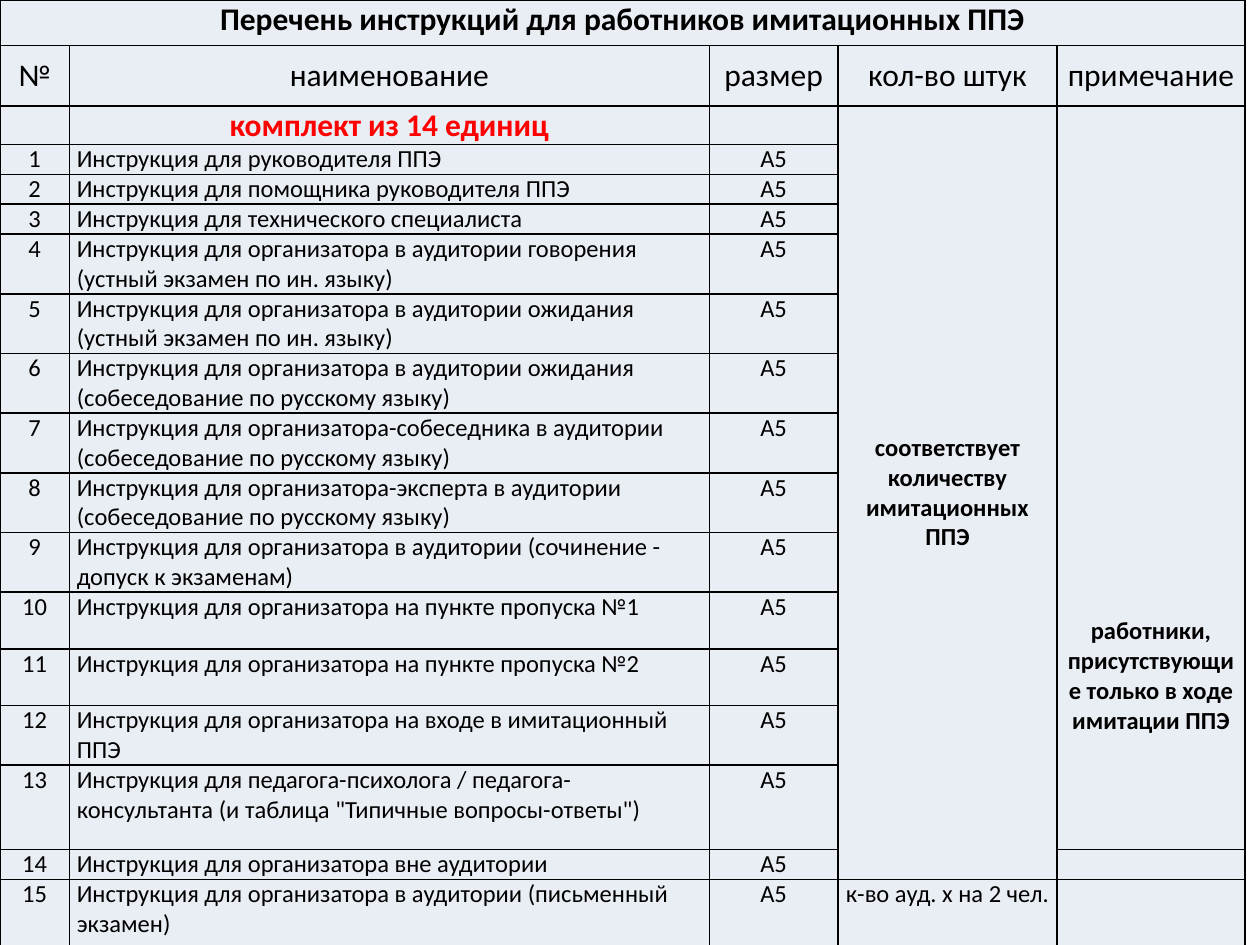
from lxml.etree import SubElement
from pptx import Presentation
from pptx.dml.color import RGBColor
from pptx.enum.text import MSO_ANCHOR as Anchor, PP_ALIGN as Align
from pptx.oxml import parse_xml
from pptx.oxml.ns import nsdecls, qn
from pptx.util import Pt

# Content
TITLE = "Перечень инструкций для работников имитационных ППЭ"
HEADERS = ["№", "наименование", "размер", "кол-во штук", "примечание"]
SET_NAME = "комплект из 14 единиц"
PAPER_SIZE = "А5"
QUANTITY = "соответствует количеству имитационных ППЭ"
REMARK = "работники, присутствующие только в ходе имитации ППЭ"
LAST_QUANTITY = "к-во ауд. х на 2 чел."
INSTRUCTIONS = [  # name, row height
    ("Инструкция для руководителя ППЭ", 16.6),
    ("Инструкция для помощника руководителя ППЭ", 16.6),
    ("Инструкция для технического специалиста", 16.6),
    ("Инструкция для организатора в аудитории говорения (устный экзамен по ин. языку)", 32.4),
    ("Инструкция для организатора в аудитории ожидания (устный экзамен по ин. языку)", 32.4),
    ("Инструкция для организатора в аудитории ожидания (собеседование по русскому языку)", 32.4),
    ("Инструкция для организатора-собеседника в аудитории (собеседование по русскому языку)", 32.4),
    ("Инструкция для организатора-эксперта в аудитории (собеседование по русскому языку)", 32.4),
    ("Инструкция для организатора в аудитории (сочинение - допуск к экзаменам)", 33.8),
    ("Инструкция для организатора на пункте пропуска №1", 32.4),
    ("Инструкция для организатора на пункте пропуска №2", 32.4),
    ("Инструкция для организатора на входе в имитационный ППЭ", 32.4),
    ("Инструкция для педагога-психолога / педагога-консультанта "
     "(и таблица \"Типичные вопросы-ответы\")", 48.2),
    ("Инструкция для организатора вне аудитории", 16.6),
    ("Инструкция для организатора в аудитории (письменный экзамен)", 38.2),
]
COLUMN_WIDTHS = [39.6, 365.8, 73.4, 125.3, 107.3]
ROW_HEIGHTS = [26, 34.6, 18.7] + [height for _, height in INSTRUCTIONS]
SET_ROW, FIRST_ROW = 2, 3
LAST_ROW = len(ROW_HEIGHTS) - 1
BLACK, RED, CELL_FILL = "000000", "FF0000", "E9EDF4"


def color(value):
    return RGBColor.from_string(value)


def write(cell, text, size=14, bold=False, ink=BLACK, align=Align.CENTER, anchor=Anchor.TOP):
    paragraph = cell.text_frame.paragraphs[0]
    paragraph.alignment = align
    cell.vertical_anchor = anchor
    run = paragraph.add_run()
    run.text = text
    run.font.name = "Calibri"
    run.font.size = Pt(size)
    run.font.bold = bold
    run.font.color.rgb = color(ink)


def format_cell(cell):
    cell.margin_left = cell.margin_right = Pt(4.3)
    cell.margin_top = cell.margin_bottom = 0
    cell.fill.solid()
    cell.fill.fore_color.rgb = color(CELL_FILL)
    properties = cell._tc.get_or_add_tcPr()
    for index, side in enumerate("LRTB"):
        properties.insert(index, parse_xml(
            f'<a:ln{side} {nsdecls("a")} w="{Pt(1)}"><a:solidFill>'
            f'<a:srgbClr val="{BLACK}"/></a:solidFill></a:ln{side}>'))


def size_empty_cell(cell, size=14):
    paragraph = cell.text_frame.paragraphs[0]
    SubElement(paragraph._p, qn("a:endParaRPr"), sz=str(size * 100))


presentation = Presentation()
presentation.slide_width, presentation.slide_height = Pt(720), Pt(540)
slide = presentation.slides.add_slide(presentation.slide_layouts[6])

# Table grid
table = slide.shapes.add_table(
    len(ROW_HEIGHTS), len(COLUMN_WIDTHS), 0, 0,
    Pt(sum(COLUMN_WIDTHS)), Pt(sum(ROW_HEIGHTS))).table
table.first_row = table.horz_banding = False
for column, width in zip(table.columns, COLUMN_WIDTHS):
    column.width = Pt(width)
for row, height in zip(table.rows, ROW_HEIGHTS):
    row.height = Pt(height)
for cell in table.iter_cells():
    format_cell(cell)

# Title and headers
table.cell(0, 0).merge(table.cell(0, 4))
write(table.cell(0, 0), TITLE, size=18, bold=True)
for column, header in enumerate(HEADERS):
    write(table.cell(1, column), header, size=18, anchor=Anchor.MIDDLE)
write(table.cell(SET_ROW, 1), SET_NAME, size=18, bold=True, ink=RED, anchor=Anchor.MIDDLE)

# Instructions
for number, (name, _) in enumerate(INSTRUCTIONS, start=1):
    row = FIRST_ROW + number - 1
    write(table.cell(row, 0), str(number))
    write(table.cell(row, 1), name, align=Align.LEFT)
    write(table.cell(row, 2), PAPER_SIZE)

# Quantity and remark, shared by many rows
quantity = table.cell(SET_ROW, 3)
quantity.merge(table.cell(LAST_ROW - 1, 3))
write(quantity, QUANTITY, bold=True, anchor=Anchor.MIDDLE)
remark = table.cell(SET_ROW, 4)
remark.merge(table.cell(LAST_ROW - 2, 4))
write(remark, REMARK, bold=True, anchor=Anchor.BOTTOM)
remark.margin_bottom = Pt(65)
write(table.cell(LAST_ROW, 3), LAST_QUANTITY)

for cell in table.iter_cells():
    if not cell.text_frame.text:
        size_empty_cell(cell)

presentation.save("out.pptx")
